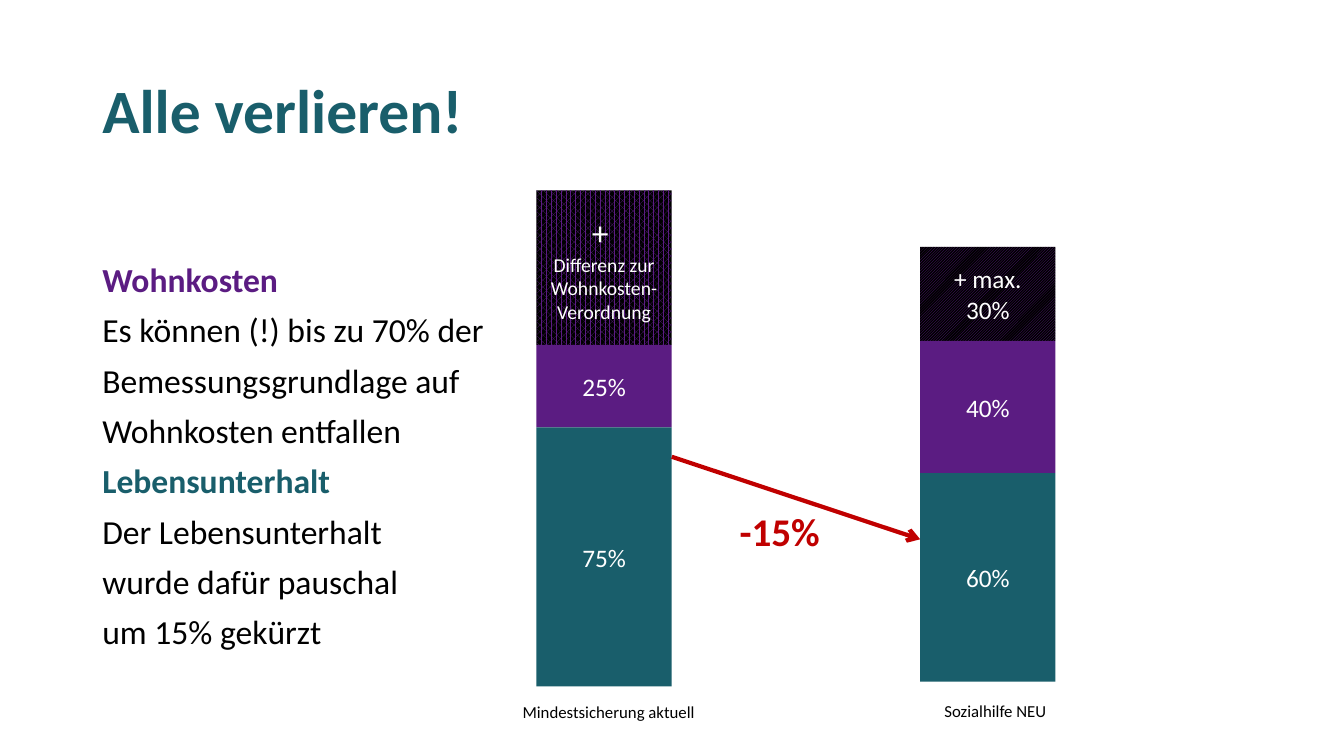
from dataclasses import dataclass

import pptx
import pptx.dml.color
import pptx.enum.dml
import pptx.enum.shapes
import pptx.enum.text
import pptx.oxml
import pptx.oxml.ns
import pptx.util

Cm = pptx.util.Cm
Color = pptx.dml.color.RGBColor
Pattern = pptx.enum.dml.MSO_PATTERN
Anchor = pptx.enum.text.MSO_ANCHOR
Align = pptx.enum.text.PP_ALIGN

TEAL = Color(0x19, 0x5E, 0x6B)
PURPLE = Color(0x5B, 0x1C, 0x82)
RED = Color(0xC0, 0x00, 0x00)
BLACK = Color(0x00, 0x00, 0x00)
WHITE = Color(0xFF, 0xFF, 0xFF)
FONT = "Calibri"
WIDTH = 3.41


@dataclass
class Line:
    text: str
    size: int
    color: Color = BLACK
    bold: bool = False


@dataclass
class Block:
    height: float
    fill: Color
    lines: list[Line]
    pattern: Pattern | None = None


@dataclass
class Stack:
    left: float
    top: float
    blocks: list[Block]


@dataclass
class Label:
    left: float
    top: float
    width: float
    height: float
    lines: list[Line]
    anchor: Anchor = Anchor.TOP
    spacing: float = 1.0
    before: int = 0


def write(frame, lines: list[Line], align: Align = Align.LEFT,
          spacing: float = 1.0, before: int = 0) -> None:
    frame.word_wrap = True
    for index, line in enumerate(lines):
        para = frame.paragraphs[0] if index == 0 else frame.add_paragraph()
        para.text = line.text
        para.alignment = align
        para.line_spacing = spacing
        para.space_before = pptx.util.Pt(before if index else 0)
        para.font.name = FONT
        para.font.size = pptx.util.Pt(line.size)
        para.font.bold = line.bold
        para.font.color.rgb = line.color


def draw_label(slide, label: Label) -> None:
    box = slide.shapes.add_textbox(
        Cm(label.left), Cm(label.top), Cm(label.width), Cm(label.height))
    box.text_frame.vertical_anchor = label.anchor
    write(box.text_frame, label.lines,
          spacing=label.spacing, before=label.before)


def draw_stack(slide, stack: Stack) -> None:
    top = stack.top
    for block in stack.blocks:
        bar = slide.shapes.add_shape(
            pptx.enum.shapes.MSO_SHAPE.RECTANGLE,
            Cm(stack.left), Cm(top), Cm(WIDTH), Cm(block.height))
        bar.shadow.inherit = False
        bar.line.fill.background()
        if block.pattern is None:
            bar.fill.solid()
            bar.fill.fore_color.rgb = block.fill
        else:
            bar.fill.patterned()
            bar.fill.pattern = block.pattern
            bar.fill.fore_color.rgb = block.fill
            bar.fill.back_color.rgb = BLACK
        bar.text_frame.vertical_anchor = Anchor.MIDDLE
        write(bar.text_frame, block.lines, Align.CENTER)
        top += block.height


def draw_arrow(slide, left: float, top: float,
               right: float, bottom: float) -> None:
    arrow = slide.shapes.add_connector(
        pptx.enum.shapes.MSO_CONNECTOR.STRAIGHT,
        Cm(left), Cm(top), Cm(right), Cm(bottom))
    arrow.line.color.rgb = RED
    arrow.line.width = pptx.util.Pt(3)
    space = pptx.oxml.ns.nsdecls("a")
    arrow.line._get_or_add_ln().append(
        pptx.oxml.parse_xml(f'<a:tailEnd {space} type="arrow"/>'))
    arrow._element.spPr.append(
        pptx.oxml.parse_xml(f"<a:effectLst {space}/>"))


STACKS = [
    Stack(13.52, 4.8, [
        Block(3.89, PURPLE,
              [Line("+ ", 24, WHITE),
               Line("Differenz zur Wohnkosten-Verordnung", 14, WHITE)],
              Pattern.PERCENT_70),
        Block(2.08, PURPLE, [Line("25%", 18, WHITE)]),
        Block(6.53, TEAL, [Line("75%", 18, WHITE)]),
    ]),
    Stack(23.19, 6.22, [
        Block(2.37, PURPLE, [Line("+ max. 30%", 18, WHITE)],
              Pattern.DARK_UPWARD_DIAGONAL),
        Block(3.33, PURPLE, [Line("40%", 18, WHITE)]),
        Block(5.26, TEAL, [Line("60%", 18, WHITE)]),
    ]),
]

LABELS = [
    Label(2.33, 1.01, 29.21, 3.68,
          [Line("Alle verlieren!", 44, TEAL, True)], Anchor.MIDDLE, 0.9),
    Label(2.33, 6.52, 10.8, 10.65, [
        Line("Wohnkosten", 24, PURPLE, True),
        Line("Es können (!) bis zu 70% der", 24),
        Line("Bemessungsgrundlage auf", 24),
        Line("Wohnkosten entfallen", 24),
        Line("Lebensunterhalt", 24, TEAL, True),
        Line("Der Lebensunterhalt", 24),
        Line("wurde dafür pauschal", 24),
        Line("um 15% gekürzt", 24),
    ], spacing=0.9, before=10),
    Label(18.39, 12.65, 4.5, 1.45, [Line("-15%", 28, RED, True)]),
    Label(12.92, 17.55, 5.66, 0.76, [Line("Mindestsicherung aktuell", 12)]),
    Label(23.55, 17.53, 5.66, 0.76, [Line("Sozialhilfe NEU", 12)]),
]


def main() -> None:
    deck = pptx.Presentation()
    deck.slide_width = Cm(33.87)
    deck.slide_height = Cm(19.05)
    slide = deck.slides.add_slide(deck.slide_layouts[6])
    for stack in STACKS:
        draw_stack(slide, stack)
    first, second = STACKS
    draw_arrow(slide, first.left + WIDTH, 11.51, second.left, 13.59)
    for label in LABELS:
        draw_label(slide, label)
    deck.save("out.pptx")


if __name__ == "__main__":
    main()
